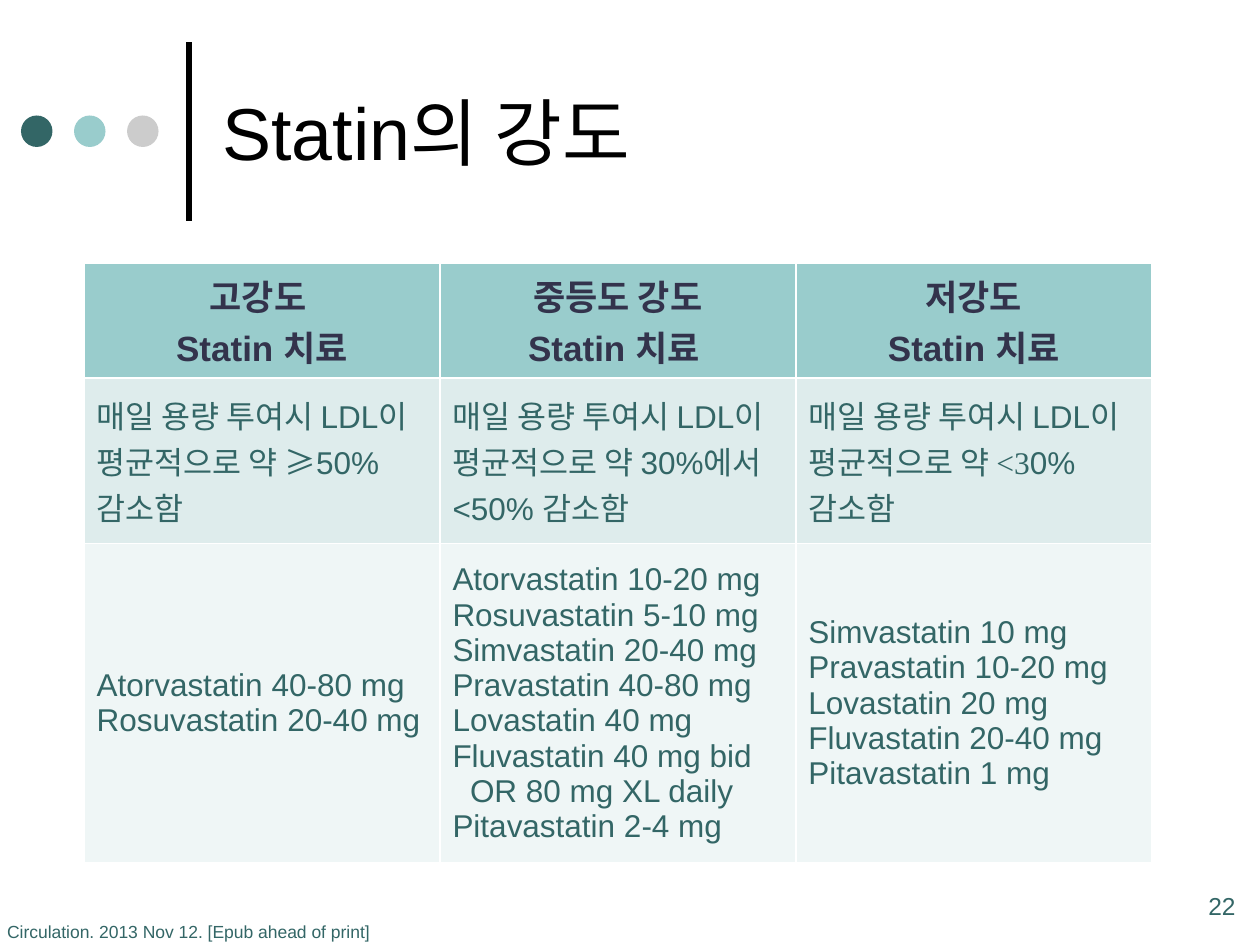
import pptx
import pptx.dml.color
import pptx.enum.shapes
import pptx.enum.text
import pptx.oxml.ns
import pptx.util
import lxml.etree

RGBColor = pptx.dml.color.RGBColor
BLACK = RGBColor(0x00, 0x00, 0x00)
TEAL = RGBColor(0x33, 0x66, 0x66)
AQUA = RGBColor(0x99, 0xCC, 0xCC)
GREY = RGBColor(0xCC, 0xCC, 0xCC)
NAVY = RGBColor(0x33, 0x33, 0x4C)
PALE = RGBColor(0xDE, 0xEC, 0xEC)
PALEST = RGBColor(0xEF, 0xF6, 0xF6)
SANS = "Arial"
SERIF = "Times New Roman"
ALIGN = pptx.enum.text.PP_ALIGN
MIDDLE = pptx.enum.text.MSO_ANCHOR.MIDDLE

presentation = pptx.Presentation()
presentation.slide_width = pptx.util.Inches(10)
presentation.slide_height = pptx.util.Inches(7.5)
slide = presentation.slides.add_slide(presentation.slide_layouts[5])


def grid(*units):
    return [round(presentation.slide_width * unit / 120) for unit in units]


def add_run(paragraph, text, size, color, bold=False, font=SANS):
    run = paragraph.add_run()
    run.text = text
    run.font.size = pptx.util.Pt(size)
    run.font.name = font
    run.font.bold = bold
    run.font.color.rgb = color


divider = slide.shapes.add_connector(
    pptx.enum.shapes.MSO_CONNECTOR.STRAIGHT, *grid(18, 21, 18, 4))
divider.line.color.rgb = BLACK
divider.line.width = pptx.util.Pt(3)
lxml.etree.SubElement(divider._element.spPr, pptx.oxml.ns.qn("a:effectLst"))

for index, color in enumerate([TEAL, AQUA, GREY]):
    dot = slide.shapes.add_shape(
        pptx.enum.shapes.MSO_SHAPE.OVAL, *grid(2 + 5.05 * index, 11, 3, 3))
    dot.shadow.inherit = False
    dot.fill.solid()
    dot.fill.fore_color.rgb = color
    dot.line.fill.background()

title = slide.shapes.title
title.left, title.top, title.width, title.height = grid(20, 2.5, 92, 20)
title.text_frame.auto_size = pptx.enum.text.MSO_AUTO_SIZE.NONE
title.text_frame.vertical_anchor = MIDDLE
title.text_frame.paragraphs[0].alignment = ALIGN.LEFT
add_run(title.text_frame.paragraphs[0], "Statin의 강도", 42, BLACK)

headings = [
    ["고강도 ", "Statin 치료"],
    ["중등도 강도", "Statin 치료 "],
    ["저강도", "Statin 치료"],
]
effect = "매일 용량 투여시 LDL이 평균적으로 약 "
effects = [
    [[(effect, SANS), ("≥", SERIF), ("50% 감소함", SANS)]],
    [[(effect + "30%에서 <50% 감소함", SANS)]],
    [[(effect, SANS), ("<3", SERIF), ("0% 감소함", SANS)]],
]
continuation = "OR 80 mg XL daily"
doses = [
    ["Atorvastatin 40-80 mg", "Rosuvastatin 20-40 mg"],
    ["Atorvastatin 10-20 mg", "Rosuvastatin 5-10 mg", "Simvastatin 20-40 mg",
     "Pravastatin 40-80 mg", "Lovastatin 40 mg", "Fluvastatin 40 mg bid",
     continuation, "Pitavastatin 2-4 mg"],
    ["Simvastatin 10 mg", "Pravastatin 10-20 mg", "Lovastatin 20 mg",
     "Fluvastatin 20-40 mg", "Pitavastatin 1 mg"],
]
rows = [
    (headings, 9.5, AQUA, 20, NAVY, True, ALIGN.CENTER),
    (effects, 15.8, PALE, 18, TEAL, False, ALIGN.LEFT),
    (doses, 30.4, PALEST, 18, TEAL, False, ALIGN.LEFT),
]

table = slide.shapes.add_table(3, 3, *grid(8, 25.1, 101.7, 55.7)).table
for column in table.columns:
    column.width = grid(33.9)[0]
for row_index, (cells, height, fill, size, color, bold, alignment) in enumerate(rows):
    table.rows[row_index].height = grid(height)[0]
    for column_index, lines in enumerate(cells):
        cell = table.cell(row_index, column_index)
        cell.fill.solid()
        cell.fill.fore_color.rgb = fill
        cell.vertical_anchor = MIDDLE
        frame = cell.text_frame
        for line_index, line in enumerate(lines):
            paragraph = frame.add_paragraph() if line_index else frame.paragraphs[0]
            paragraph.alignment = alignment
            if line == continuation:
                paragraph._p.get_or_add_pPr().set("marL", str(grid(1.67)[0]))
            pieces = [(line, SANS)] if isinstance(line, str) else line
            for text, font in pieces:
                add_run(paragraph, text, size, color, bold, font)

for text, size, place in [
    ("Circulation. 2013 Nov 12. [Epub ahead of print]", 10, (-0.5, 87.1, 60, 3.2)),
    ("22", 14, (113.9, 84.3, 17, 6)),
]:
    note = slide.shapes.add_textbox(*grid(*place))
    note.text_frame.word_wrap = True
    add_run(note.text_frame.paragraphs[0], text, size, TEAL)

presentation.save("out.pptx")
